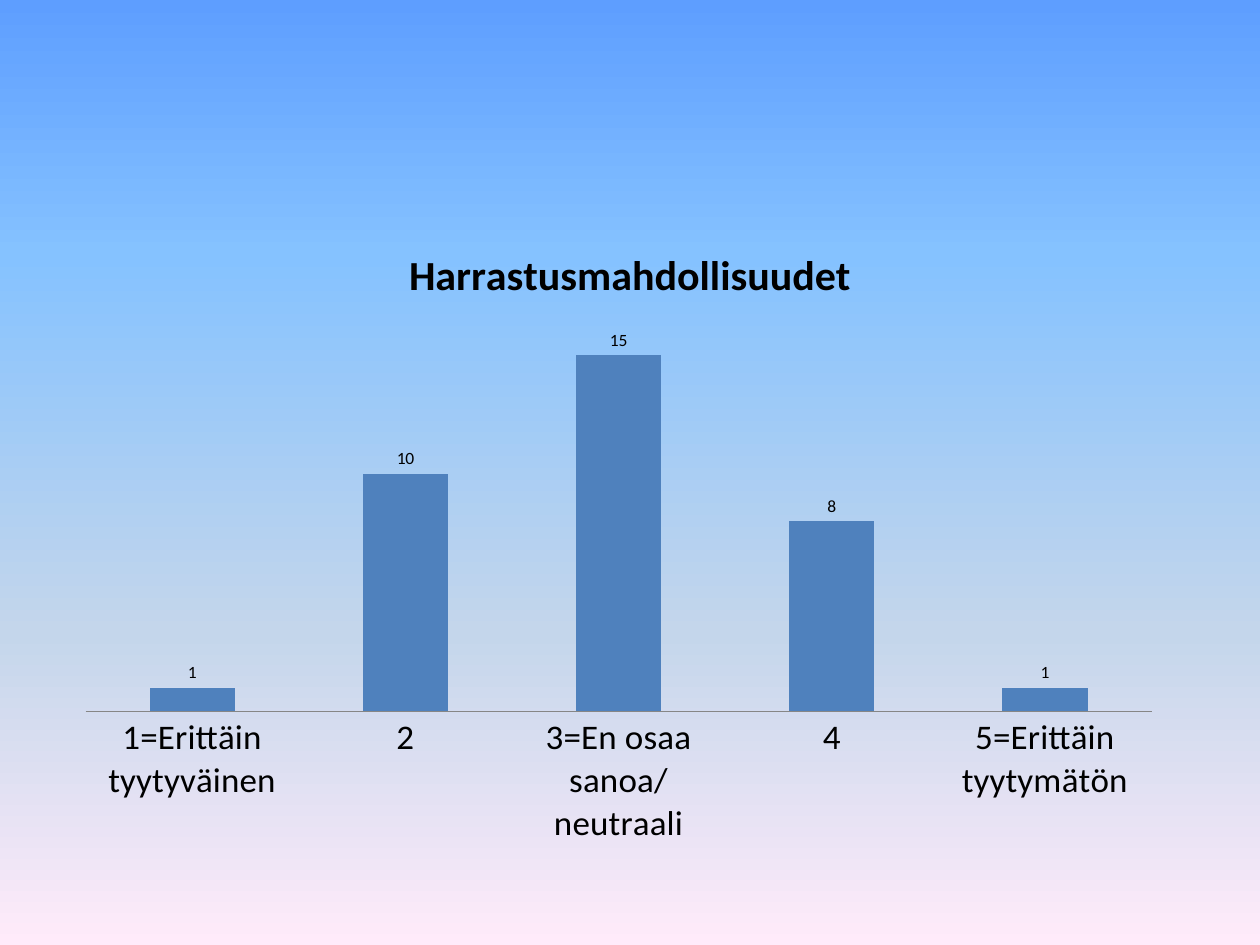
import copy
from dataclasses import dataclass

import lxml.etree
import pptx
import pptx.chart.data
import pptx.dml.color
import pptx.enum.chart
import pptx.oxml.ns
import pptx.util

qn = pptx.oxml.ns.qn


@dataclass(frozen=True)
class Theme:
    font: str = "Calibri"
    text: str = "000000"
    bar: str = "4F81BD"
    axis: str = "868686"
    sky: tuple = ((0, "5E9EFF"), (27, "85C2FF"), (67, "C4D6EB"), (100, "FFEBFA"))
    title_size: int = 24
    category_size: int = 20
    label_size: int = 10


def rgb(code):
    return pptx.dml.color.RGBColor.from_string(code)


class Deck:
    """Holds the theme and the current slide; places are shares of its size."""

    def __init__(self, theme, width, height):
        self.theme = theme
        self.prs = pptx.Presentation()
        self.prs.slide_width = pptx.util.Inches(width)
        self.prs.slide_height = pptx.util.Inches(height)
        self.s = None

    def add_slide(self):
        self.s = self.prs.slides.add_slide(self.prs.slide_layouts[6])

    def background(self, stops):
        fill = self.s.background.fill
        fill.gradient()
        fill.gradient_angle = 270
        gs_list = self.s.background._cSld.find(".//" + qn("a:gsLst"))
        template = copy.deepcopy(gs_list[0])
        for gs in list(gs_list):
            gs_list.remove(gs)
        for share, code in stops:
            gs = copy.deepcopy(template)
            gs.set("pos", str(share * 1000))
            for child in list(gs):
                gs.remove(child)
            lxml.etree.SubElement(gs, qn("a:srgbClr"), val=code)
            gs_list.append(gs)

    def style(self, font, size, bold=False):
        font.name = self.theme.font
        font.size = pptx.util.Pt(size)
        font.bold = bold
        font.color.rgb = rgb(self.theme.text)

    def plot_area(self, chart, x, y, w, h):
        area = chart._chartSpace.chart.plotArea
        for old in area.findall(qn("c:layout")):
            area.remove(old)
        layout = lxml.etree.Element(qn("c:layout"))
        manual = lxml.etree.SubElement(layout, qn("c:manualLayout"))
        settings = dict(layoutTarget="inner", xMode="edge", yMode="edge",
                        x=x, y=y, w=w, h=h)
        for name, value in settings.items():
            lxml.etree.SubElement(manual, qn("c:" + name), val=str(value))
        area.insert(0, layout)

    def column_chart(self, title, answers, place, plot_place, top):
        theme = self.theme
        data = pptx.chart.data.CategoryChartData()
        data.categories = list(answers)
        data.add_series("Series 1", list(answers.values()))
        width, height = self.prs.slide_width, self.prs.slide_height
        x, y, w, h = place
        chart = self.s.shapes.add_chart(
            pptx.enum.chart.XL_CHART_TYPE.COLUMN_CLUSTERED,
            int(x * width), int(y * height), int(w * width), int(h * height),
            data).chart
        self.style(chart.font, theme.label_size)
        chart.has_legend = False
        self.plot_area(chart, *plot_place)

        # Title
        chart.has_title = True
        tf = chart.chart_title.text_frame
        tf.text = title
        self.style(tf.paragraphs[0].runs[0].font, theme.title_size, bold=True)

        # Axes
        none = pptx.enum.chart.XL_TICK_MARK.NONE
        axis = chart.category_axis
        axis.major_tick_mark = axis.minor_tick_mark = none
        axis.format.line.color.rgb = rgb(theme.axis)
        self.style(axis.tick_labels.font, theme.category_size)
        axis = chart.value_axis
        axis.minimum_scale, axis.maximum_scale = 0, top
        axis.has_major_gridlines = False
        axis.visible = False

        # Columns and their values
        plot = chart.plots[0]
        plot.vary_by_categories = False
        plot.gap_width, plot.overlap = 150, -25
        fill = plot.series[0].format.fill
        fill.solid()
        fill.fore_color.rgb = rgb(theme.bar)
        plot.has_data_labels = True
        labels = plot.data_labels
        labels.show_value = True
        labels.position = pptx.enum.chart.XL_LABEL_POSITION.OUTSIDE_END
        self.style(labels.font, theme.label_size)


def main():
    theme = Theme()
    deck = Deck(theme, 10, 7.5)
    deck.add_slide()
    deck.background(theme.sky)
    deck.column_chart(
        "Harrastusmahdollisuudet",
        {"1=Erittäin tyytyväinen": 1, "2": 10, "3=En osaa sanoa/neutraali": 15,
         "4": 8, "5=Erittäin tyytymätön": 1},
        place=(0.05, 1.75 / 7.5, 0.9, 0.66),
        plot_place=(0.02, 0.18, 0.94, 0.62),
        top=16)
    deck.prs.save("out.pptx")


if __name__ == "__main__":
    main()
